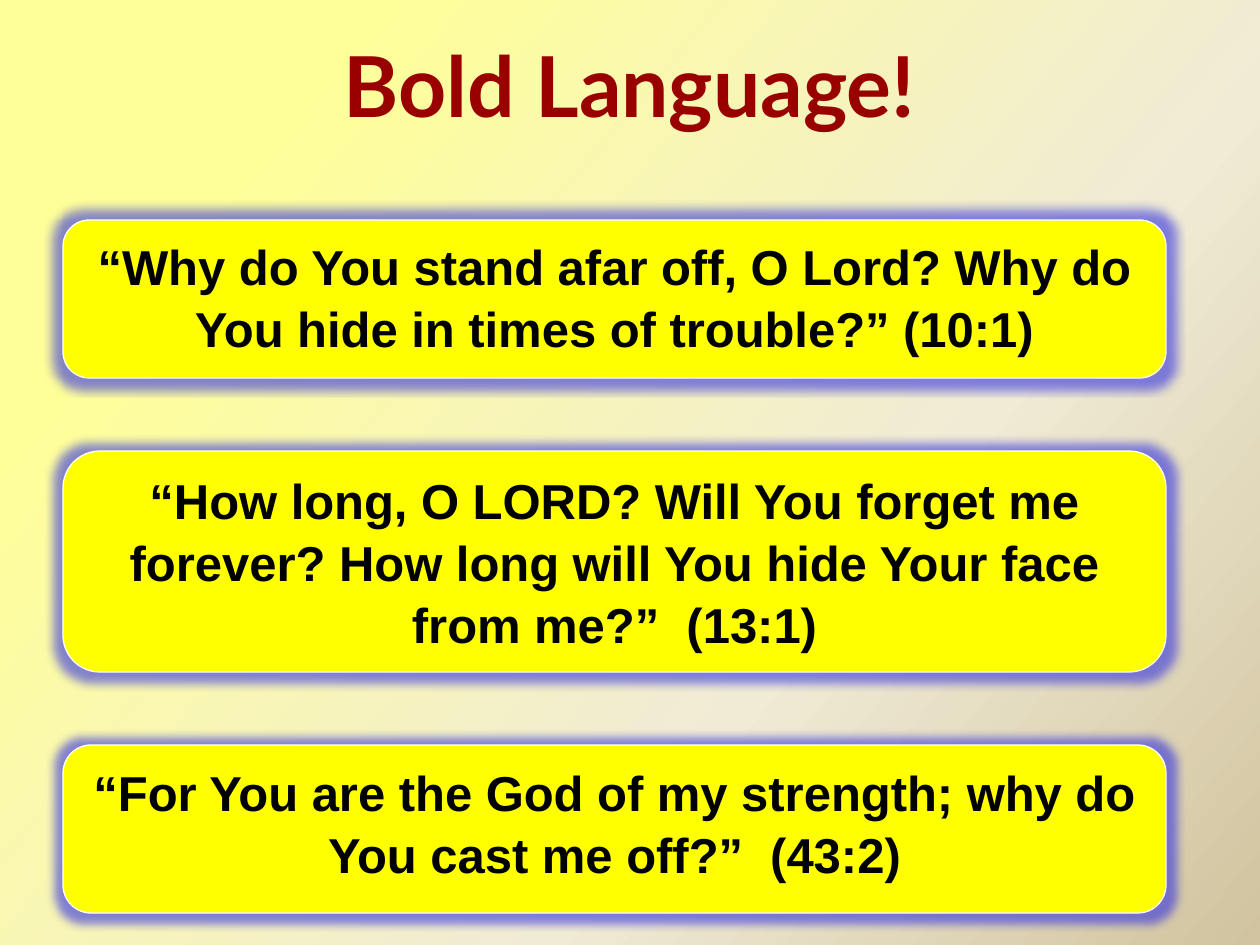
from dataclasses import dataclass

from lxml.etree import fromstring
from pptx import Presentation
from pptx.dml.color import RGBColor
from pptx.enum.shapes import MSO_SHAPE
from pptx.enum.text import MSO_ANCHOR, PP_ALIGN
from pptx.oxml.ns import nsdecls
from pptx.util import Emu, Pt

EMU_PER_PX = 914400 / 126
RED = RGBColor(0x99, 0x00, 0x00)
BLACK = RGBColor(0x00, 0x00, 0x00)
WHITE = RGBColor(0xFF, 0xFF, 0xFF)
YELLOW = RGBColor(0xFF, 0xFF, 0x00)
GLOW = RGBColor(0x33, 0x33, 0xE0)
PALE_YELLOW = RGBColor(0xFF, 0xFF, 0x99)
CREAM = RGBColor(0xF0, 0xEB, 0xD5)
TAN = RGBColor(0xD1, 0xC3, 0x9F)

TITLE_FONT = {"name": "Lato", "size": Pt(48), "bold": True}
VERSE_FONT = {"name": "Arial", "size": Pt(28), "bold": True}


@dataclass
class Verse:
    top: int
    height: int
    text: str


VERSES = [
    Verse(220, 158, "“Why do You stand afar off, O Lord? Why do You hide in times of trouble?” (10:1)"),
    Verse(451, 221, "“How long, O LORD? Will You forget me forever? How long will You hide Your face from me?”  (13:1)"),
    Verse(745, 168, "“For You are the God of my strength; why do You cast me off?”  (43:2)"),
]


def px(n: int) -> Emu:
    return Emu(round(n * EMU_PER_PX))


def write(tf, text: str, font: dict, color: RGBColor, anchor) -> None:
    tf.word_wrap = True
    tf.vertical_anchor = anchor
    p = tf.paragraphs[0]
    p.alignment = PP_ALIGN.CENTER
    r = p.add_run()
    r.text = text
    for name, value in font.items():
        setattr(r.font, name, value)
    r.font.color.rgb = color


def set_background(s) -> None:
    s.background.fill.gradient()
    grad = s.background.fill._fill._gradFill
    for child in list(grad):
        grad.remove(child)
    stops = [(18, PALE_YELLOW, 76), (65, CREAM, 100), (100, TAN, 100)]
    gs = "".join(
        f'<a:gs pos="{pos * 1000}"><a:srgbClr val="{color}">'
        f'<a:alpha val="{alpha * 1000}"/></a:srgbClr></a:gs>'
        for pos, color, alpha in stops
    )
    grad.append(fromstring(f'<a:gsLst {nsdecls("a")}>{gs}</a:gsLst>'))
    grad.append(fromstring(f'<a:lin {nsdecls("a")} ang="{40 * 60000}" scaled="0"/>'))


def add_glow(sp) -> None:
    sp.shadow.inherit = False
    effects = sp._element.spPr.find("{*}effectLst")
    effects.append(fromstring(
        f'<a:glow {nsdecls("a")} rad="{Pt(11)}"><a:srgbClr val="{GLOW}">'
        '<a:alpha val="60000"/></a:srgbClr></a:glow>'
    ))


def add_verse(s, verse: Verse) -> None:
    sp = s.shapes.add_shape(
        MSO_SHAPE.ROUNDED_RECTANGLE, px(63), px(verse.top), px(1103), px(verse.height)
    )
    sp.fill.solid()
    sp.fill.fore_color.rgb = YELLOW
    sp.line.color.rgb = WHITE
    sp.line.width = Pt(0.75)
    add_glow(sp)
    write(sp.text_frame, verse.text, VERSE_FONT, BLACK, MSO_ANCHOR.TOP)
    sp.text_frame.paragraphs[0].line_spacing = 1.05


def main() -> None:
    """Build the slide of three bold quotations and save it."""
    prs = Presentation()
    prs.slide_width, prs.slide_height = px(1260), px(945)
    s = prs.slides.add_slide(prs.slide_layouts[5])
    set_background(s)
    title = s.shapes.title
    box = {"left": px(63), "top": px(0), "width": px(1113), "height": px(168)}
    for name, value in box.items():
        setattr(title, name, value)
    write(title.text_frame, " Bold Language!", TITLE_FONT, RED, MSO_ANCHOR.MIDDLE)
    for verse in VERSES:
        add_verse(s, verse)
    prs.save("out.pptx")


if __name__ == "__main__":
    main()
